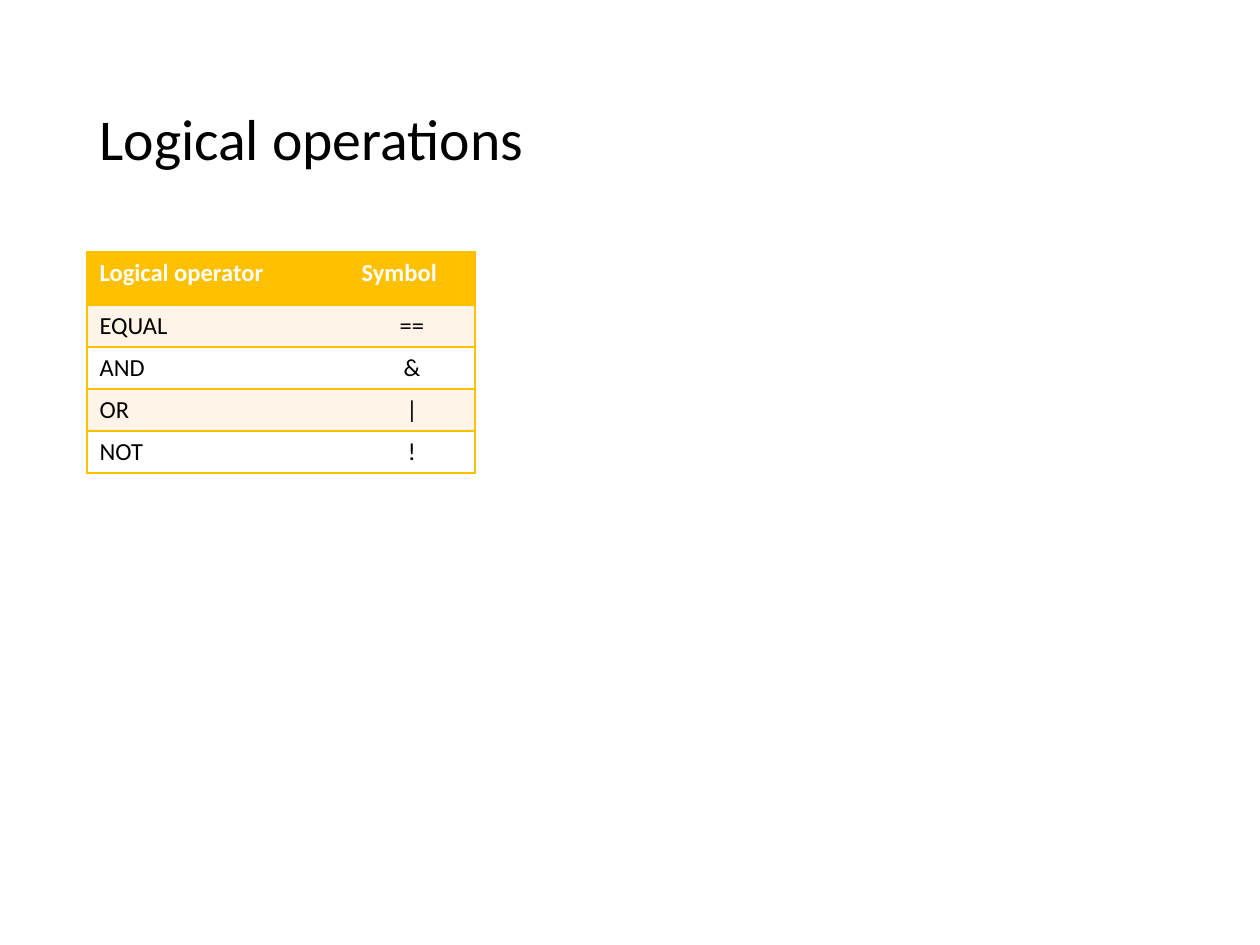
import pptx
import pptx.util
import pptx.dml.color
import pptx.enum.text
import pptx.oxml

PX = 914400 // 126
HUES = {"gold": "FFC000", "cream": "FFF4E7", "white": "FFFFFF", "black": "000000"}
ALIGN = pptx.enum.text.PP_ALIGN


def write(frame, text, size=14, hue="black", bold=False, align=ALIGN.LEFT, space=1.0):
    para = frame.paragraphs[0]
    para.alignment = align
    para.line_spacing = space
    run = para.add_run()
    run.text = text
    run.font.name = "Calibri"
    run.font.size = pptx.util.Pt(size)
    run.font.bold = bold
    run.font.color.rgb = pptx.dml.color.RGBColor.from_string(HUES[hue])


def edge(cell, sides):
    props = cell._tc.get_or_add_tcPr()
    for spot, side in enumerate("LRTB"):
        fill = "<a:noFill/>"
        if side in sides:
            fill = f'<a:solidFill><a:srgbClr val="{HUES["gold"]}"/></a:solidFill>'
        line = pptx.oxml.parse_xml(
            f'<a:ln{side} xmlns:a="http://schemas.openxmlformats.org/drawingml/2006/main"'
            f' w="12700">{fill}</a:ln{side}>')
        props.insert(spot, line)


deck = pptx.Presentation()
deck.slide_width = 1260 * PX
deck.slide_height = 945 * PX
slide = deck.slides.add_slide(deck.slide_layouts[6])

title = slide.shapes.add_textbox(87 * PX, 50 * PX, 1086 * PX, 183 * PX).text_frame
title.word_wrap = True
title.vertical_anchor = pptx.enum.text.MSO_ANCHOR.MIDDLE
write(title, "Logical operations", size=33, space=0.9)

rows = [("Logical operator", "Symbol"), ("EQUAL", "=="), ("AND", "&"), ("OR", "|"), ("NOT", "!")]
wide = [262, 126]
high = [53] + [42] * 4
table = slide.shapes.add_table(
    len(rows), len(wide), 87 * PX, 252 * PX, sum(wide) * PX, sum(high) * PX).table
table.horz_banding = False
for col, width in zip(table.columns, wide):
    col.width = width * PX

for r, row in enumerate(rows):
    table.rows[r].height = high[r] * PX
    head = r == 0
    back = "gold" if head else "cream" if r % 2 else "white"
    for c, text in enumerate(row):
        cell = table.cell(r, c)
        cell.fill.solid()
        cell.fill.fore_color.rgb = pptx.dml.color.RGBColor.from_string(HUES[back])
        edge(cell, "RTB" if c else "LTB")
        write(cell.text_frame, text, hue="white" if head else "black", bold=head,
              align=ALIGN.CENTER if c and not head else ALIGN.LEFT)

deck.save("out.pptx")
